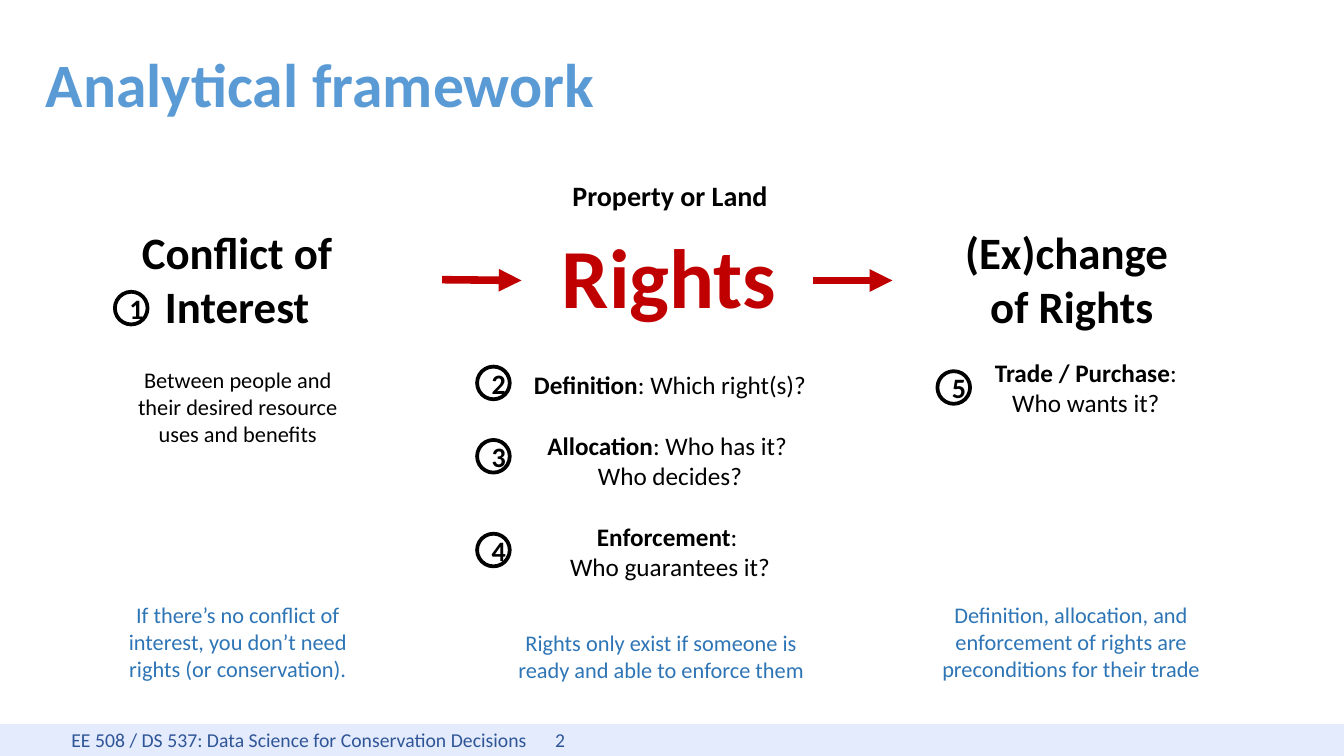
from dataclasses import dataclass
from typing import NamedTuple

from pptx import Presentation
from pptx.dml.color import RGBColor
from pptx.enum.shapes import MSO_CONNECTOR, MSO_SHAPE
from pptx.enum.text import MSO_ANCHOR, PP_ALIGN
from pptx.oxml.ns import qn
from pptx.util import Inches, Pt
from lxml import etree

BLACK = RGBColor(0x00, 0x00, 0x00)
WHITE = RGBColor(0xFF, 0xFF, 0xFF)
RED = RGBColor(0xC0, 0x00, 0x00)
TITLE_BLUE = RGBColor(0x5B, 0x9B, 0xD5)
NOTE_BLUE = RGBColor(0x2E, 0x75, 0xB6)
FOOTER_BLUE = RGBColor(0x2F, 0x55, 0x97)
FOOTER_FILL = RGBColor(0xE3, 0xEB, 0xFC)

LEFT, CENTER = PP_ALIGN.LEFT, PP_ALIGN.CENTER
TOP, MIDDLE = MSO_ANCHOR.TOP, MSO_ANCHOR.MIDDLE
RECTANGLE, OVAL = MSO_SHAPE.RECTANGLE, MSO_SHAPE.OVAL
STRAIGHT = MSO_CONNECTOR.STRAIGHT

SLIDE_WIDTH, SLIDE_HEIGHT = Inches(11.11), Inches(6.25)
COLUMN, ROW = SLIDE_WIDTH / 100, SLIDE_HEIGHT / 100
FONT = "Calibri"
FRAME_FORMAT = {
    "word_wrap": True,
    "margin_left": Inches(0.08),
    "margin_right": Inches(0.08),
    "margin_top": Inches(0.04),
    "margin_bottom": Inches(0.04),
}
BADGE_SIZE = Inches(0.27)
FOOTER_TABS = (0.51, 4.51)


class Area(NamedTuple):
    column: float
    row: float
    columns: float
    rows: float


class Span(NamedTuple):
    text: str
    bold: bool = False


class Arrow(NamedTuple):
    start_column: float
    start_row: float
    end_column: float
    end_row: float


class Badge(NamedTuple):
    label: str
    column: float
    row: float


@dataclass(frozen=True)
class TextBlock:
    area: Area
    paragraphs: tuple[tuple[Span, ...], ...]
    size: float
    color: RGBColor = BLACK
    gap: float = 0


def heading(text: str) -> tuple[tuple[Span, ...], ...]:
    return ((Span(text, True),),)


def plain(text: str) -> tuple[tuple[Span, ...], ...]:
    return ((Span(text),),)


BLOCKS = (
    TextBlock(Area(38.25, 29.1, 23.1, 15), heading("Rights"), 50, RED),
    TextBlock(Area(41, 23, 17.7, 6.1), heading("Property or Land"), 16.7),
    TextBlock(
        Area(37.35, 48.2, 25, 29.9),
        (
            (Span("Definition", True), Span(": Which right(s)?")),
            (Span("Allocation", True), Span(": Who has it? \nWho decides?")),
            (Span("Enforcement", True), Span(": \nWho guarantees it?")),
        ),
        15,
        gap=18.3,
    ),
    TextBlock(Area(68.2, 29.1, 23.1, 16), heading("(Ex)change \nof Rights"), 26.7),
    TextBlock(Area(6.1, 29.1, 23.1, 16), heading("Conflict of Interest"), 26.7),
    TextBlock(
        Area(72.2, 46.6, 17.2, 9.8),
        ((Span("Trade / Purchase", True), Span(": Who wants it?")),),
        15,
    ),
    TextBlock(
        Area(8.55, 78.9, 18.3, 12.3),
        plain("If there’s no conflict of interest, you don’t need rights (or conservation)."),
        13.3,
        NOTE_BLUE,
    ),
    TextBlock(
        Area(9.1, 47.8, 17.2, 12.3),
        plain("Between people and their desired resource uses and benefits"),
        13.3,
    ),
    TextBlock(
        Area(69, 78.9, 21.4, 12.3),
        plain("Definition, allocation, and enforcement of rights are preconditions for their trade"),
        13.3,
        NOTE_BLUE,
    ),
    TextBlock(
        Area(37, 82.6, 24.4, 8.8),
        plain("Rights only exist if someone is ready and able to enforce them"),
        13.3,
        NOTE_BLUE,
    ),
)
ARROWS = (Arrow(32.9, 37, 38.8, 37.1), Arrow(60.5, 37.1, 66.4, 37.1))
BADGES = (
    Badge("1", 8.55, 38.6),
    Badge("2", 35.5, 48.5),
    Badge("3", 35.5, 58.2),
    Badge("4", 35.5, 70.6),
    Badge("5", 69.75, 49.1),
)


def place(area: Area) -> tuple[int, int, int, int]:
    return (
        round(area.column * COLUMN),
        round(area.row * ROW),
        round(area.columns * COLUMN),
        round(area.rows * ROW),
    )


def write(frame, block: TextBlock, alignment=CENTER, anchor=TOP) -> None:
    for name, value in FRAME_FORMAT.items():
        setattr(frame, name, value)
    frame.vertical_anchor = anchor
    for index, spans in enumerate(block.paragraphs):
        para = frame.add_paragraph() if index else frame.paragraphs[0]
        para.alignment = alignment
        para.space_before = Pt(block.gap if index else 0)
        for part in spans:
            for line_index, line in enumerate(part.text.split("\n")):
                if line_index:
                    para.add_line_break()
                span = para.add_run()
                span.text = line
                font_format = {"name": FONT, "size": Pt(block.size), "bold": part.bold}
                for name, value in font_format.items():
                    setattr(span.font, name, value)
                span.font.color.rgb = block.color


def add_footer(page) -> None:
    area = Area(0, 95.8, 100, 4.2)
    bar = page.shapes.add_shape(RECTANGLE, *place(area))
    bar.shadow.inherit = False
    bar.fill.solid()
    bar.fill.fore_color.rgb = FOOTER_FILL
    bar.line.fill.background()
    text = "\tEE 508 / DS 537: Data Science for Conservation Decisions\t2"
    write(bar.text_frame, TextBlock(area, plain(text), 11.7, FOOTER_BLUE), LEFT, MIDDLE)
    properties = bar.text_frame.paragraphs[0]._p.get_or_add_pPr()
    tabs = etree.SubElement(properties, qn("a:tabLst"))
    for position in FOOTER_TABS:
        etree.SubElement(tabs, qn("a:tab"), pos=str(Inches(position)), algn="l")


def add_title(page) -> None:
    area = Area(2.7, 4.6, 95.3, 13.9)
    title = page.shapes.title
    title.left, title.top, title.width, title.height = place(area)
    block = TextBlock(area, heading("Analytical framework"), 36.7, TITLE_BLUE)
    write(title.text_frame, block, LEFT, MIDDLE)
    title.text_frame.paragraphs[0].line_spacing = 0.9


def add_arrow(page, arrow: Arrow) -> None:
    connector = page.shapes.add_connector(
        STRAIGHT,
        round(arrow.start_column * COLUMN),
        round(arrow.start_row * ROW),
        round(arrow.end_column * COLUMN),
        round(arrow.end_row * ROW),
    )
    connector.line.color.rgb = RED
    connector.line.width = Pt(4.5)
    properties = connector.element.spPr
    etree.SubElement(properties.find(qn("a:ln")), qn("a:tailEnd"), type="triangle")
    etree.SubElement(properties, qn("a:effectLst"))


def add_badge(page, badge: Badge) -> None:
    area = Area(badge.column, badge.row, BADGE_SIZE / COLUMN, BADGE_SIZE / ROW)
    circle = page.shapes.add_shape(OVAL, *place(area))
    circle.shadow.inherit = False
    circle.fill.solid()
    circle.fill.fore_color.rgb = WHITE
    circle.line.color.rgb = BLACK
    circle.line.width = Pt(2.25)
    write(circle.text_frame, TextBlock(area, heading(badge.label), 16.7), anchor=MIDDLE)


def main() -> None:
    deck = Presentation()
    deck.slide_width, deck.slide_height = SLIDE_WIDTH, SLIDE_HEIGHT
    page = deck.slides.add_slide(deck.slide_layouts[5])
    add_footer(page)
    add_title(page)
    for block in BLOCKS:
        box = page.shapes.add_textbox(*place(block.area))
        write(box.text_frame, block)
    for arrow in ARROWS:
        add_arrow(page, arrow)
    for badge in BADGES:
        add_badge(page, badge)
    deck.save("out.pptx")


if __name__ == "__main__":
    main()
